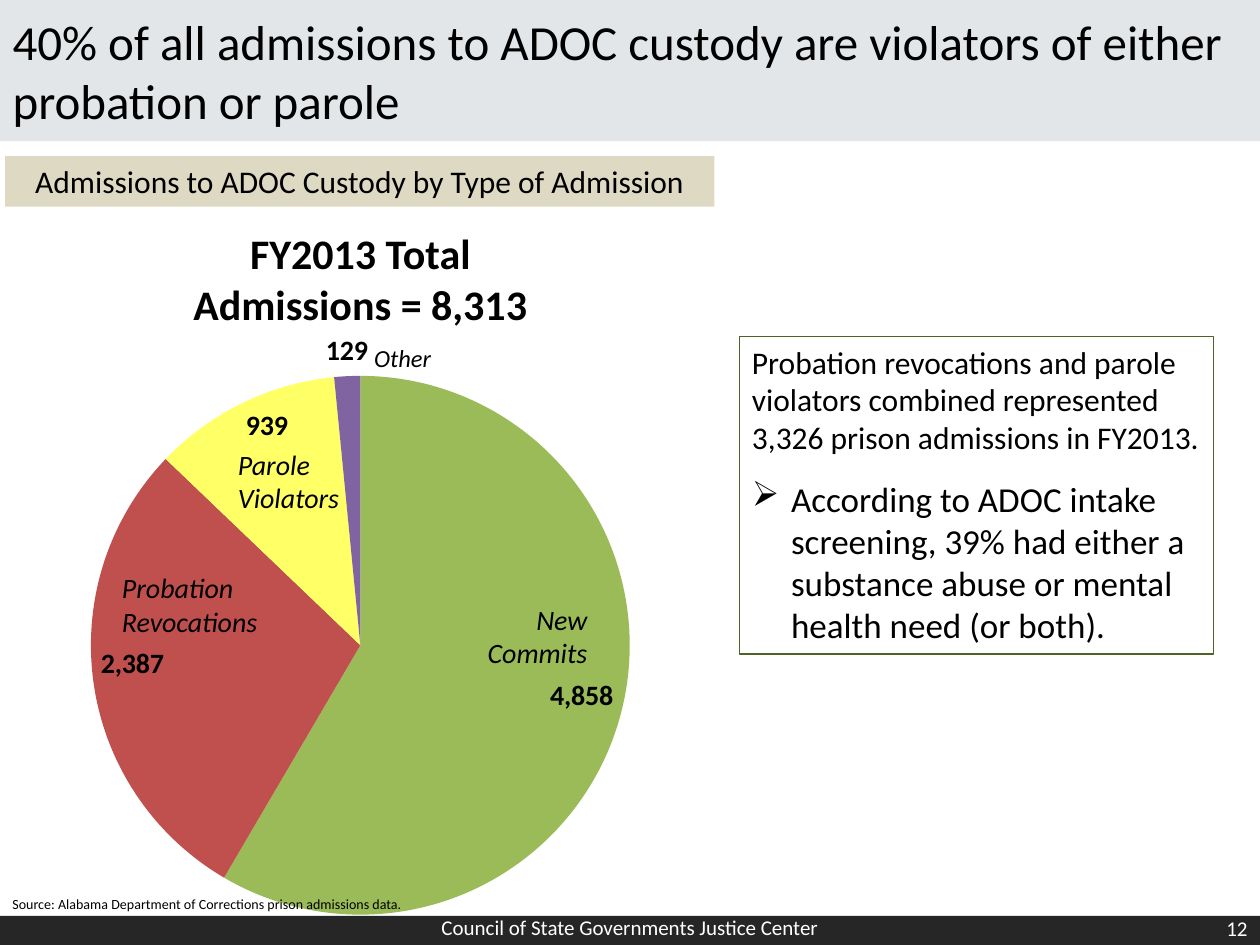
import pptx
import pptx.chart.data
import pptx.dml.color
import pptx.enum.chart
import pptx.enum.shapes
import pptx.enum.text
import pptx.util
from lxml import etree
from pptx.oxml.ns import qn
from pptx.util import Inches

FONT = "Calibri"
COLORS = {
    "text": "000000", "white": "FFFFFF", "title": "E2E6E9", "heading": "DDD9C3",
    "footer": "262626", "outline": "4F6228",
    "commits": "9BBB59", "probation": "C0504D", "parole": "FFFF66", "other": "8064A2",
}
ADMISSIONS = {"commits": 4858, "probation": 2387, "parole": 939, "other": 129}
ALIGN = pptx.enum.text.PP_ALIGN
ANCHOR = pptx.enum.text.MSO_ANCHOR
LABEL = pptx.enum.chart.XL_LABEL_POSITION


def rgb(name):
    return pptx.dml.color.RGBColor.from_string(COLORS[name])


def style_font(font, size, color="text", bold=False, italic=False):
    font.name = FONT
    font.size = pptx.util.Pt(size)
    font.bold = bold
    font.italic = italic
    font.color.rgb = rgb(color)


def write(para, text, size=18, align=ALIGN.LEFT, **style):
    para.alignment = align
    span = para.add_run()
    span.text = text
    style_font(span.font, size, **style)


def add_text(page, box, text, anchor=ANCHOR.TOP, **style):
    shape = page.shapes.add_textbox(*map(Inches, box))
    shape.text_frame.word_wrap = True
    shape.text_frame.vertical_anchor = anchor
    write(shape.text_frame.paragraphs[0], text, **style)


def add_box(page, box, fill=None, line=None):
    shape = page.shapes.add_shape(
        pptx.enum.shapes.MSO_SHAPE.RECTANGLE, *map(Inches, box))
    shape.shadow.inherit = False
    if fill:
        shape.fill.solid()
        shape.fill.fore_color.rgb = rgb(fill)
    else:
        shape.fill.background()
    if line:
        shape.line.color.rgb = rgb(line)
        shape.line.width = pptx.util.Pt(0.75)
    else:
        shape.line.fill.background()
    shape.text_frame.word_wrap = True
    shape.text_frame.vertical_anchor = ANCHOR.TOP
    return shape


def add_title(page, box, text):
    title = page.shapes.title
    title.left, title.top, title.width, title.height = map(Inches, box)
    title.fill.solid()
    title.fill.fore_color.rgb = rgb("title")
    frame = title.text_frame
    frame.word_wrap = True
    frame.auto_size = pptx.enum.text.MSO_AUTO_SIZE.NONE
    frame.vertical_anchor = ANCHOR.MIDDLE
    write(frame.paragraphs[0], text, size=28)


def add_heading(page, box, text):
    heading = add_box(page, box, fill="heading")
    write(heading.text_frame.paragraphs[0], text, align=ALIGN.CENTER)


def set_plot_area(chart, **fractions):
    """Fix the inner plot area as fractions of the chart box."""
    area = chart.element.find(".//" + qn("c:plotArea"))
    layout = area.find(qn("c:layout"))
    if layout is None:
        layout = etree.Element(qn("c:layout"))
        area.insert(0, layout)
    manual = etree.SubElement(layout, qn("c:manualLayout"))
    settings = {"layoutTarget": "inner", "xMode": "edge", "yMode": "edge", **fractions}
    for tag, value in settings.items():
        etree.SubElement(manual, qn("c:" + tag)).set("val", str(value))


def add_pie(page, box):
    left, top, width, height = box
    data = pptx.chart.data.CategoryChartData(number_format="#,##0")
    data.categories = [str(number + 1) for number in range(len(ADMISSIONS))]
    data.add_series("Series 1", ADMISSIONS.values())
    chart = page.shapes.add_chart(
        pptx.enum.chart.XL_CHART_TYPE.PIE, *map(Inches, box), data).chart
    chart.has_legend = False
    chart.has_title = False
    style_font(chart.font, 18)
    set_plot_area(chart, x=0.06, y=0.09, w=0.88, h=0.88)

    plot = chart.plots[0]
    plot.vary_by_categories = True
    series = plot.series[0]
    labels = series.data_labels
    labels.show_value = True
    labels.number_format = "#,##0"
    labels.number_format_is_linked = False
    labels.position = LABEL.INSIDE_END
    style_font(labels.font, 16, bold=True)
    for index, name in enumerate(ADMISSIONS):
        fill = series.points[index].format.fill
        fill.solid()
        fill.fore_color.rgb = rgb(name)
    # The thin last slice carries its value outside
    outside = series.points[len(ADMISSIONS) - 1].data_label
    style_font(outside.font, 16, bold=True)
    outside.position = LABEL.OUTSIDE_END

    # Slice names and total, placed from the chart's corner
    names = [
        ((3.18, 2.2, 1.15, 0.64), "New Commits", 16, ALIGN.RIGHT),
        ((0.44, 1.95, 1.57, 0.64), "Probation Revocations", 16, ALIGN.LEFT),
        ((1.36, 0.97, 1.15, 0.64), "Parole Violators", 16, ALIGN.LEFT),
        ((2.44, 0.14, 1.15, 0.34), "Other", 14, ALIGN.LEFT),
    ]
    for (dx, dy, *extent), text, size, align in names:
        add_text(page, (left + dx, top + dy, *extent), text,
                 size=size, align=align, italic=True)
    add_text(page, (left + 0.79, top - 0.77, 3.28, 0.91),
             "FY2013 Total Admissions = 8,313", size=24, align=ALIGN.CENTER, bold=True)


def add_findings(page, box):
    frame = add_box(page, box, line="outline").text_frame
    write(frame.paragraphs[0], "Probation revocations and parole violators combined "
          "represented 3,326 prison admissions in FY2013.")
    para = frame.add_paragraph()
    para.space_before = pptx.util.Pt(12)
    write(para, "According to ADOC intake screening, 39% had either a substance "
          "abuse or mental health need (or both).", size=20)
    properties = para._p.get_or_add_pPr()
    properties.set("marL", str(Inches(0.31)))
    properties.set("indent", str(-Inches(0.31)))
    etree.SubElement(properties, qn("a:buChar")).set("char", "➢")


def add_footer(page, box):
    left, top, width, height = box
    add_box(page, box, fill="footer")
    style = {"size": 12, "color": "white", "anchor": ANCHOR.MIDDLE}
    add_text(page, (left + 3.22, top - 0.12, 3.56, 0.42),
             "Council of State Governments Justice Center", align=ALIGN.CENTER, **style)
    add_text(page, (left + width - 2.33, top - 0.1, 2.33, 0.4), "12",
             align=ALIGN.RIGHT, **style)


def main():
    deck = pptx.Presentation()
    deck.slide_width, deck.slide_height = Inches(10), Inches(7.5)
    page = deck.slides.add_slide(deck.slide_layouts[5])
    add_title(page, (0, 0, 10, 1.12), "40% of all admissions to ADOC custody are "
              "violators of either probation or parole")
    add_footer(page, (0, 7.27, 10, 0.23))
    add_heading(page, (0.04, 1.24, 5.63, 0.4),
                "Admissions to ADOC Custody by Type of Admission")
    add_pie(page, (0.43, 2.53, 4.86, 4.89))
    add_findings(page, (5.87, 2.67, 3.76, 2.52))
    add_text(page, (0, 7.06, 10, 0.22),
             "Source: Alabama Department of Corrections prison admissions data.", size=8)
    deck.save("out.pptx")


if __name__ == "__main__":
    main()
